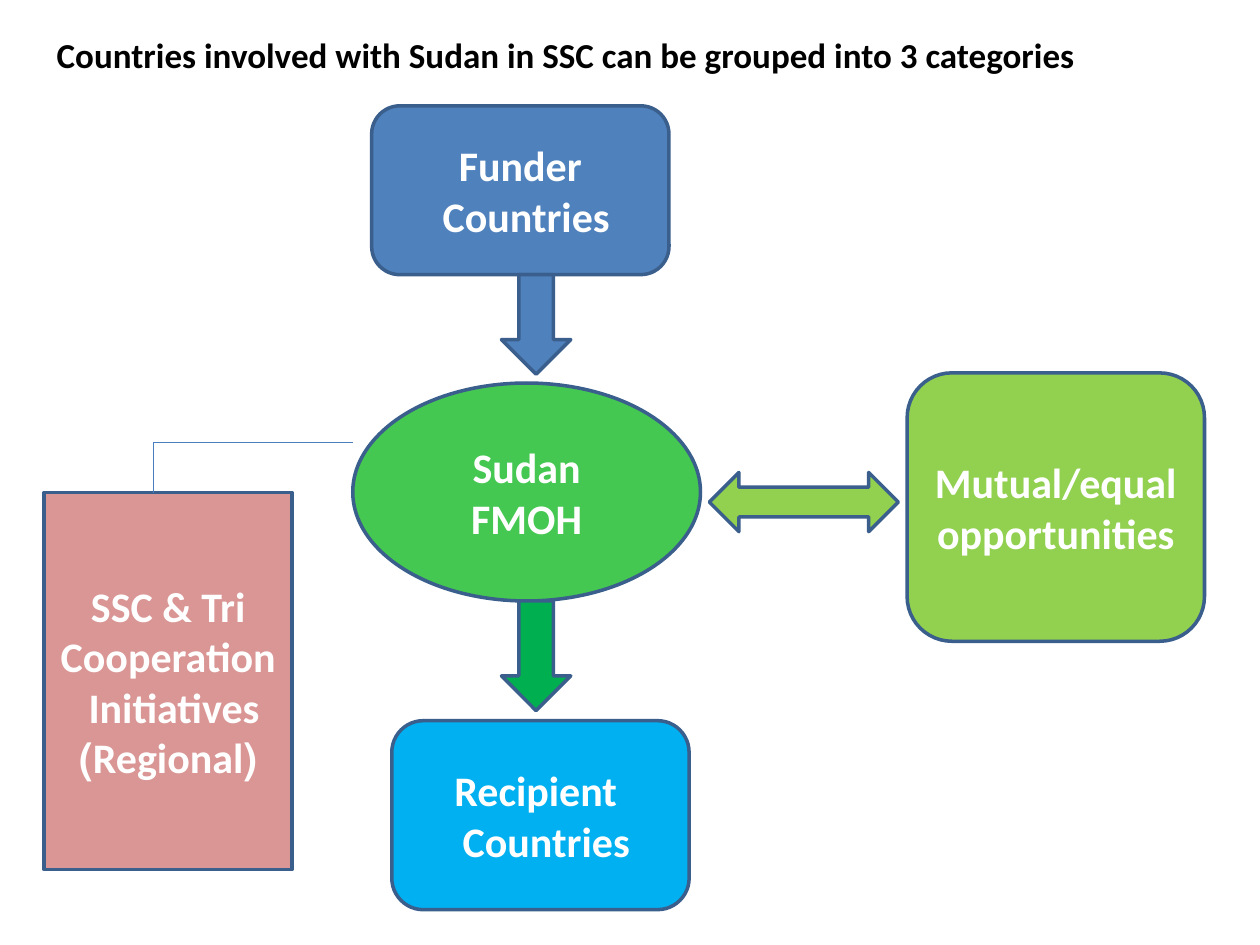
from pptx import Presentation
from pptx.dml.color import RGBColor
from pptx.enum import shapes, text
from pptx.oxml.ns import qn
from pptx.util import Inches, Pt
from lxml import etree

KIND = shapes.MSO_SHAPE
OUTLINE = "3A5F8C"


def color(value):
    return RGBColor.from_string(value)


def add_run(para, words, size, value):
    span = para.add_run()
    span.text = words
    span.font.name = "Calibri"
    span.font.size = Pt(size)
    span.font.bold = True
    span.font.color.rgb = color(value)


deck = Presentation()
deck.slide_width, deck.slide_height = Inches(10), Inches(7.5)
page = deck.slides.add_slide(deck.slide_layouts[5])

# Title
title = page.shapes.title
title.left, title.top = Inches(0.35), Inches(0.21)
title.width, title.height = Inches(8.35), Inches(0.44)
frame = title.text_frame
frame.auto_size = text.MSO_AUTO_SIZE.NONE
frame.word_wrap = False
frame.vertical_anchor = text.MSO_ANCHOR.MIDDLE
frame.paragraphs[0].alignment = text.PP_ALIGN.LEFT
add_run(frame.paragraphs[0],
        "Countries involved with Sudan in SSC can be grouped into 3 categories",
        20, "000000")

# Country groups and the arrows between them: kind, place, fill, paragraphs
parts = [
    (KIND.ROUNDED_RECTANGLE, (2.95, 0.84, 2.36, 1.34), "4F81BD",
     ["Funder Countries "]),
    (KIND.ROUNDED_RECTANGLE, (3.11, 5.72, 2.36, 1.5), "00B0F0",
     ["Recipient  Countries "]),
    (KIND.ROUNDED_RECTANGLE, (7.2, 2.96, 2.36, 2.13), "92D050",
     ["Mutual/equal opportunities"]),
    (KIND.OVAL, (2.8, 3.04, 2.76, 1.73), "44C851", ["Sudan FMOH"]),
    (KIND.RECTANGLE, (0.35, 3.91, 1.97, 2.99), "D99694",
     ["SSC & Tri", "Cooperation Initiatives ", "(Regional)"]),
    (KIND.DOWN_ARROW, (3.98, 2.18, 0.55, 0.79), "4F81BD", []),
    (KIND.DOWN_ARROW, (3.98, 4.77, 0.55, 0.87), "00B050", []),
    (KIND.LEFT_RIGHT_ARROW, (5.63, 3.75, 1.5, 0.47), "92D050", []),
]
for kind, place, fill, lines in parts:
    box = page.shapes.add_shape(kind, *[Inches(n) for n in place])
    box.shadow.inherit = False
    box.fill.solid()
    box.fill.fore_color.rgb = color(fill)
    box.line.color.rgb = color(OUTLINE)
    box.line.width = Pt(2)
    frame = box.text_frame
    frame.word_wrap = True
    frame.vertical_anchor = text.MSO_ANCHOR.MIDDLE
    for index, words in enumerate(lines):
        para = frame.add_paragraph() if index else frame.paragraphs[0]
        para.alignment = text.PP_ALIGN.CENTER
        para._p.get_or_add_pPr().set("rtl", "1")
        add_run(para, words, 24, "FFFFFF")

# Elbow from Sudan to the regional initiatives
corners = [(2.8, 3.51), (1.22, 3.51), (1.22, 3.91)]
for start, end in zip(corners, corners[1:]):
    link = page.shapes.add_connector(
        shapes.MSO_CONNECTOR.STRAIGHT, *[Inches(n) for n in start + end])
    link.line.color.rgb = color("4B7EBC")
    link.line.width = Pt(0.75)
    etree.SubElement(link._element.spPr, qn("a:effectLst"))

deck.save("out.pptx")
